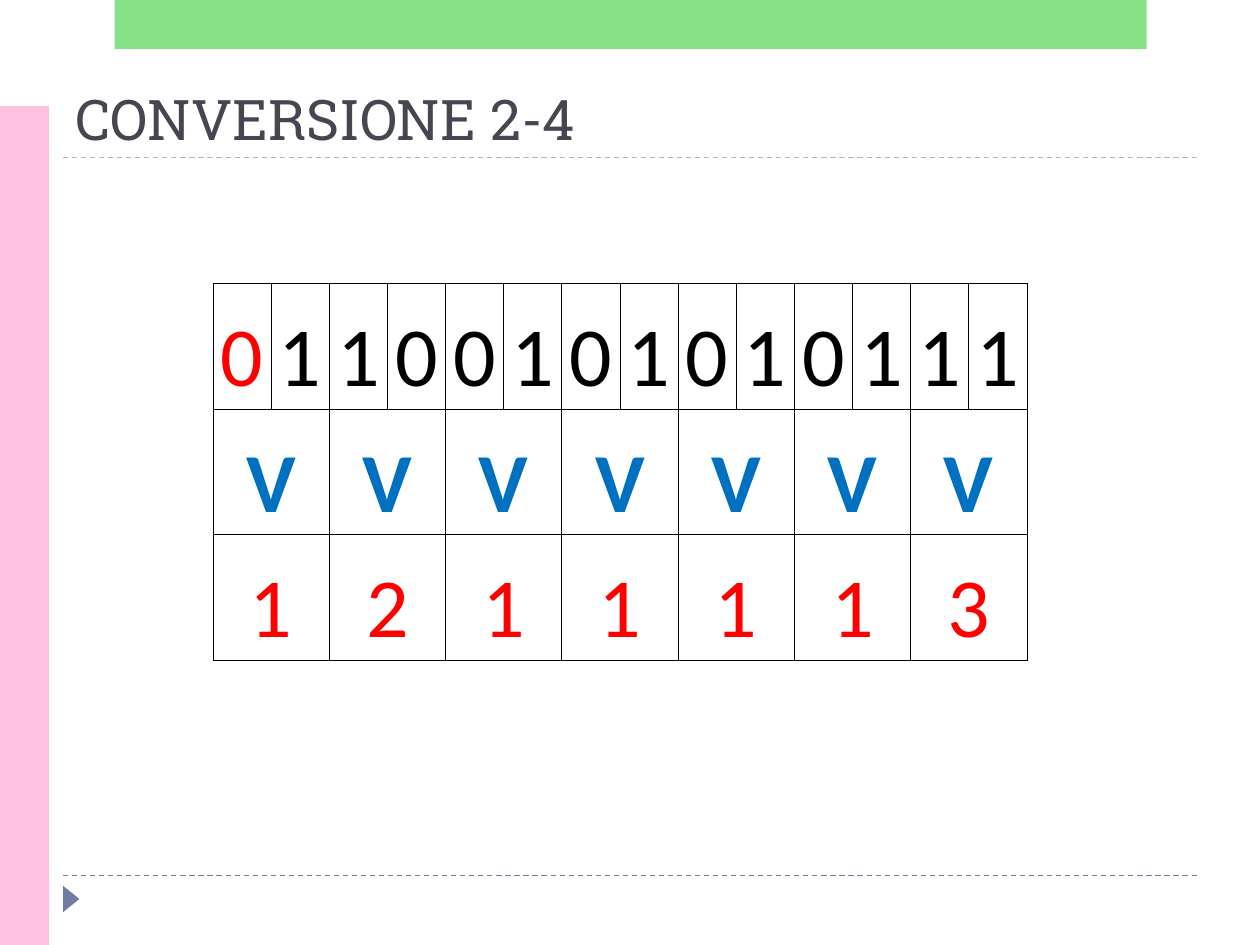
from lxml.etree import SubElement
from pptx import Presentation
from pptx.dml.color import RGBColor
from pptx.enum.dml import MSO_LINE
from pptx.enum.shapes import MSO_CONNECTOR, MSO_SHAPE
from pptx.enum.text import MSO_ANCHOR, PP_ALIGN
from pptx.oxml.ns import qn
from pptx.util import Inches, Pt

TITLE = "CONVERSIONE 2-4"
BITS = "01100101010111"
ARROW = "V"
DIGITS = "1211113"

BLACK, RED, BLUE = "000000", "FF0000", "0070C0"
SLATE = "727CA3"
RULES = [(6.95, SLATE), (1.25, "9FB8CD")]  # y, colour
# shape, (left, top, width, height), colour, rotation, opacity %
DECORATIONS = [
    (MSO_SHAPE.ISOSCELES_TRIANGLE, (0.46, 7.07, 0.21, 0.13), SLATE, 90, 100),
    (MSO_SHAPE.RECTANGLE, (0, 0.84, 0.39, 6.66), "FFC1E0", 0, 100),
    (MSO_SHAPE.RECTANGLE, (0.91, 0, 8.19, 0.39), "62D862", 0, 76),
]
TABLE_BOX = (1.69, 2.25, 6.46, 2.99)


def rgb(color):
    return RGBColor.from_string(color)


def inches(box):
    return [Inches(v) for v in box]


def add_rule(slide, y, color):
    line = slide.shapes.add_connector(
        MSO_CONNECTOR.STRAIGHT, *inches((0.5, y, 9.5, y)))
    line.line.color.rgb = rgb(color)
    line.line.width = Pt(0.75)
    line.line.dash_style = MSO_LINE.DASH
    SubElement(line._element.spPr, qn("a:effectLst"))


def add_decoration(slide, kind, box, color, rotation, opacity):
    sp = slide.shapes.add_shape(kind, *inches(box))
    sp.shadow.inherit = False
    sp.rotation = rotation
    sp.fill.solid()
    sp.fill.fore_color.rgb = rgb(color)
    sp.line.fill.background()
    if opacity < 100:
        clr = sp._element.spPr.find(".//" + qn("a:srgbClr"))
        SubElement(clr, qn("a:alpha"), val=str(opacity * 1000))


def format_run(r, font, size, color, bold=False):
    r.font.name = font
    r.font.size = Pt(size)
    r.font.bold = bold
    r.font.color.rgb = rgb(color)


def add_title(slide):
    tf = slide.shapes.add_textbox(*inches((0.5, 0.55, 9, 0.7))).text_frame
    tf.word_wrap = True
    tf.vertical_anchor = MSO_ANCHOR.BOTTOM
    tf.text = TITLE
    format_run(tf.paragraphs[0].runs[0], "Roboto Slab", 32, "464653")


def style_cell(cell):
    """Give the cell thin black borders, no fill and tight margins."""
    cell.margin_left = cell.margin_right = cell.margin_top = Inches(0.01)
    cell.margin_bottom = 0
    cell.vertical_anchor = MSO_ANCHOR.BOTTOM
    tcPr = cell._tc.get_or_add_tcPr()
    for side in ("lnL", "lnR", "lnT", "lnB"):
        ln = SubElement(tcPr, qn("a:" + side), w=str(Pt(0.5)))
        SubElement(SubElement(ln, qn("a:solidFill")), qn("a:srgbClr"), val=BLACK)
    cell.fill.background()


def write_cell(cell, text, color, bold=False):
    cell.text = text
    p = cell.text_frame.paragraphs[0]
    p.alignment = PP_ALIGN.CENTER
    format_run(p.runs[0], "Calibri", 48, color, bold)


def add_conversion_table(slide):
    table = slide.shapes.add_table(3, len(BITS), *inches(TABLE_BOX)).table
    table.first_row = table.horz_banding = False
    for cell in table.iter_cells():
        style_cell(cell)
    for col, bit in enumerate(BITS):
        write_cell(table.cell(0, col), bit, BLACK if col else RED)
    for i, digit in enumerate(DIGITS):
        for row, text, color, bold in ((1, ARROW, BLUE, True), (2, digit, RED, False)):
            cell = table.cell(row, 2 * i)
            cell.merge(table.cell(row, 2 * i + 1))
            write_cell(cell, text, color, bold)


def main():
    prs = Presentation()
    prs.slide_width, prs.slide_height = Inches(10), Inches(7.5)
    slide = prs.slides.add_slide(prs.slide_layouts[6])
    for rule in RULES:
        add_rule(slide, *rule)
    for decoration in DECORATIONS:
        add_decoration(slide, *decoration)
    add_title(slide)
    add_conversion_table(slide)
    prs.save("out.pptx")


if __name__ == "__main__":
    main()
